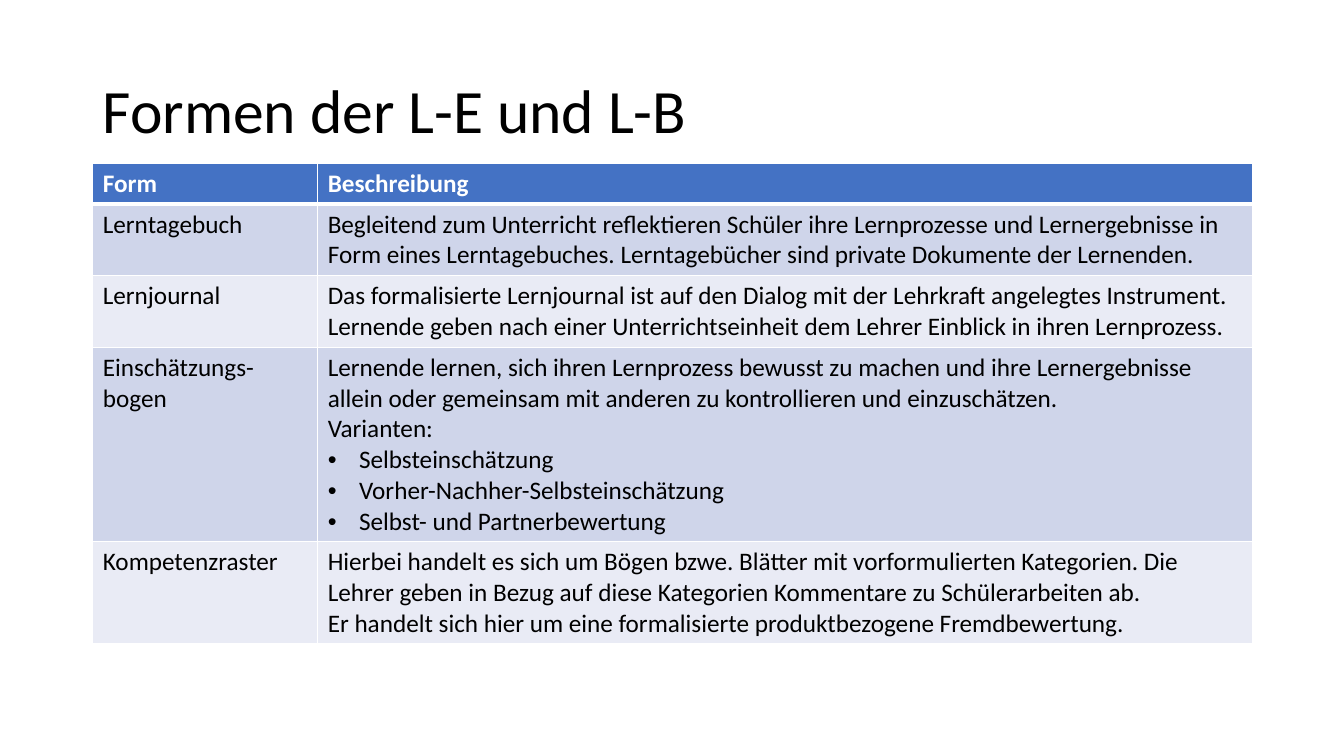
from lxml import etree
from pptx import Presentation
from pptx import util as u
from pptx.dml.color import RGBColor
from pptx.enum import text
from pptx.oxml import ns

WIDTH, HEIGHT = u.Inches(13.33), u.Inches(7.5)
LEFT, CONTENT_WIDTH = u.Inches(0.92), u.Inches(11.5)
TABLE_TOP = u.Inches(1.62)
COLUMN_SHARES = (0.194, 0.806)
LINE_HEIGHT, CELL_PADDING = u.Inches(0.305), u.Inches(0.1)
BULLET_INDENT = u.Inches(0.31)

BLACK = RGBColor(0x00, 0x00, 0x00)
WHITE = RGBColor(0xFF, 0xFF, 0xFF)
HEADER_BLUE = RGBColor(0x44, 0x72, 0xC4)
BANDS = (RGBColor(0xE9, 0xEB, 0xF5), RGBColor(0xCF, 0xD5, 0xEA))

TITLE_FORMAT = {"name": "Calibri", "size": u.Pt(44), "bold": False}
HEADER_FORMAT = {"name": "Calibri", "size": u.Pt(18), "bold": True}
BODY_FORMAT = {**HEADER_FORMAT, "bold": False}

# Each row: line count, form, paragraphs of the description
ROWS = [
    (1, "Form", ["Beschreibung"]),
    (2, "Lerntagebuch", [
        "Begleitend zum Unterricht reflektieren Schüler ihre Lernprozesse und Lernergebnisse in "
        "Form eines Lerntagebuches. Lerntagebücher sind private Dokumente der Lernenden."]),
    (2, "Lernjournal", [
        "Das formalisierte Lernjournal ist auf den Dialog mit der Lehrkraft angelegtes Instrument. "
        "Lernende geben nach einer Unterrichtseinheit dem Lehrer Einblick in ihren Lernprozess."]),
    (6, "Einschätzungs-bogen", [
        "Lernende lernen, sich ihren Lernprozess bewusst zu machen und ihre Lernergebnisse "
        "allein oder gemeinsam mit anderen zu kontrollieren und einzuschätzen.",
        "Varianten:",
        "• Selbsteinschätzung",
        "• Vorher-Nachher-Selbsteinschätzung",
        "• Selbst- und Partnerbewertung"]),
    (3, "Kompetenzraster", [
        "Hierbei handelt es sich um Bögen bzwe. Blätter mit vorformulierten Kategorien. Die "
        "Lehrer geben in Bezug auf diese Kategorien Kommentare zu Schülerarbeiten ab.",
        "Er handelt sich hier um eine formalisierte produktbezogene Fremdbewertung."]),
]


def add_bullet(para):
    properties = para._p.get_or_add_pPr()
    properties.set("marL", str(BULLET_INDENT))
    properties.set("indent", str(-BULLET_INDENT))
    etree.SubElement(properties, ns.qn("a:buFont")).set("typeface", "Arial")
    etree.SubElement(properties, ns.qn("a:buChar")).set("char", "•")


def write(frame, paragraphs, formats, color):
    for index, content in enumerate(paragraphs):
        para = frame.paragraphs[0] if index == 0 else frame.add_paragraph()
        if content.startswith("• "):
            add_bullet(para)
        span = para.add_run()
        span.text = content.removeprefix("• ")
        for name, value in formats.items():
            setattr(span.font, name, value)
        span.font.color.rgb = color


def add_borders(cell, widths):
    properties = cell._tc.get_or_add_tcPr()
    for side, points in widths.items():
        line = etree.SubElement(properties, ns.qn(f"a:ln{side}"), w=str(u.Pt(points)))
        fill = etree.SubElement(line, ns.qn("a:solidFill"))
        etree.SubElement(fill, ns.qn("a:srgbClr"), val=str(WHITE))


def add_title(page, title):
    box = page.shapes.add_textbox(LEFT, u.Inches(0.4), CONTENT_WIDTH, u.Inches(1.45))
    box.text_frame.word_wrap = True
    box.text_frame.vertical_anchor = text.MSO_ANCHOR.MIDDLE
    write(box.text_frame, [title], TITLE_FORMAT, BLACK)
    box.text_frame.paragraphs[0].line_spacing = 0.9


def add_forms_table(page):
    heights = [CELL_PADDING + lines * LINE_HEIGHT for lines, _, _ in ROWS]
    table = page.shapes.add_table(len(ROWS), len(COLUMN_SHARES), LEFT, TABLE_TOP,
                                  CONTENT_WIDTH, sum(heights)).table
    for column, share in zip(table.columns, COLUMN_SHARES):
        column.width = int(CONTENT_WIDTH * share)
    for row, (_, form, description) in enumerate(ROWS):
        table.rows[row].height = heights[row]
        header = row == 0
        widths = {"L": 1, "R": 1, "T": 3 if row == 1 else 1, "B": 3 if header else 1}
        for column, paragraphs in enumerate(([form], description)):
            cell = table.cell(row, column)
            add_borders(cell, widths)
            cell.fill.solid()
            cell.fill.fore_color.rgb = HEADER_BLUE if header else BANDS[row % 2]
            write(cell.text_frame, paragraphs, HEADER_FORMAT if header else BODY_FORMAT,
                  WHITE if header else BLACK)


def main():
    deck = Presentation()
    deck.slide_width, deck.slide_height = WIDTH, HEIGHT
    page = deck.slides.add_slide(deck.slide_layouts[6])
    add_title(page, "Formen der L-E und L-B")
    add_forms_table(page)
    deck.save("out.pptx")


if __name__ == "__main__":
    main()
